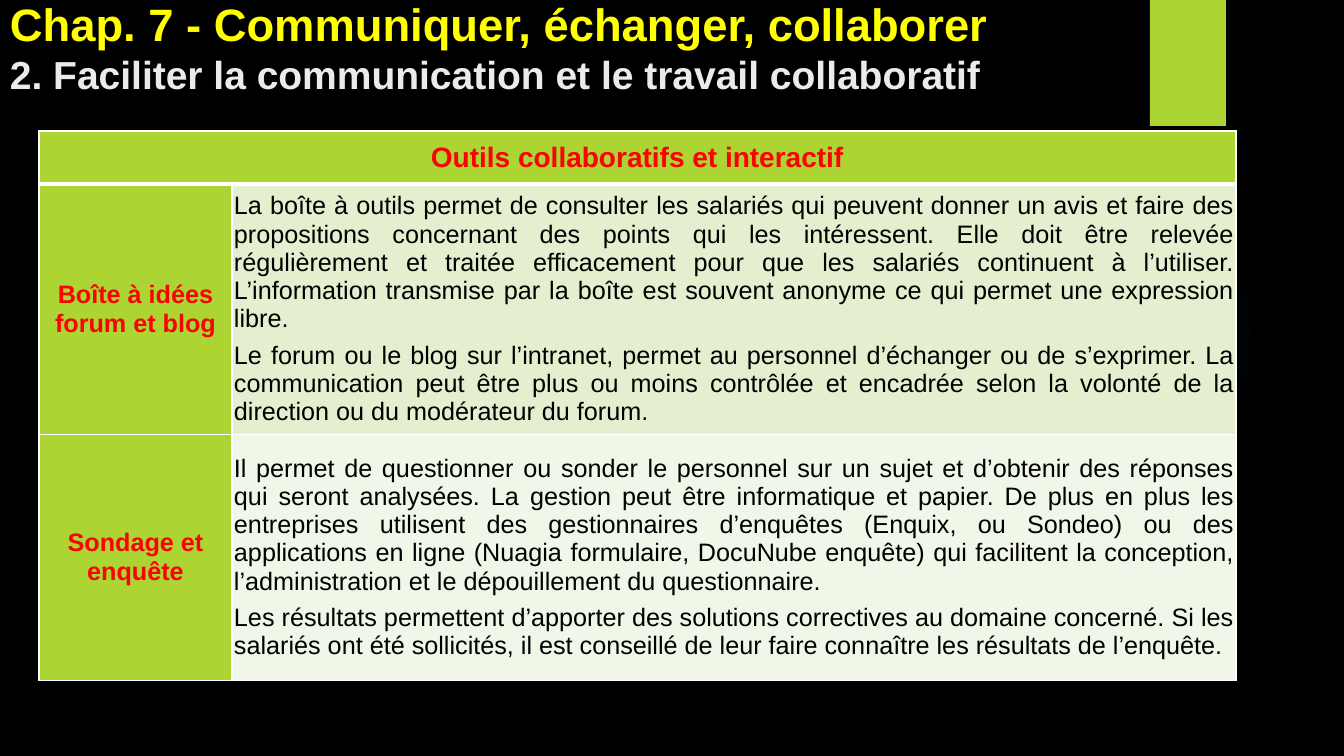
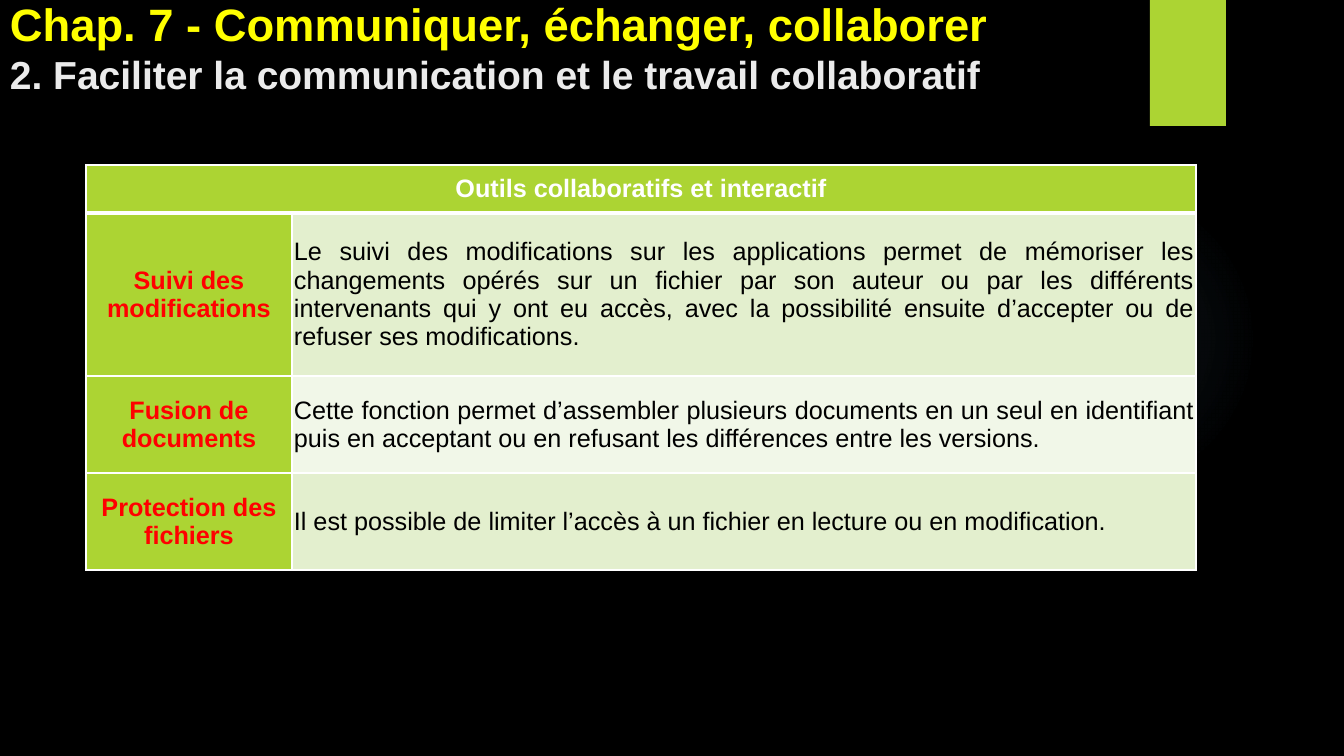
import pptx
import pptx.util
import pptx.dml.color
import pptx.enum.shapes
import pptx.enum.text
import pptx.oxml
import pptx.oxml.ns

RGB = pptx.dml.color.RGBColor
ALIGN = pptx.enum.text.PP_ALIGN
ANCHOR = pptx.enum.text.MSO_ANCHOR
SHAPE = pptx.enum.shapes.MSO_SHAPE

BLACK = RGB(0x00, 0x00, 0x00)
WHITE = RGB(0xFF, 0xFF, 0xFF)
YELLOW = RGB(0xFF, 0xFF, 0x00)
RED = RGB(0xFF, 0x00, 0x00)
PALE_GREY = RGB(0xEB, 0xEB, 0xEB)
LIME = RGB(0xAC, 0xD4, 0x33)
GLOW_BLUE = RGB(0x7A, 0xC4, 0xF0)
ROW_TINTS = [RGB(0xE3, 0xEF, 0xCE), RGB(0xF1, 0xF7, 0xE8)]
FONT = "Arial"
NAMESPACE = pptx.oxml.ns.nsdecls("a")

# Content: lengths in px
TITLE_LINES = [
    ("Chap. 7 - Communiquer, échanger, collaborer", 32.4, YELLOW),
    ("2. Faciliter la communication et le travail collaboratif", 27.9, PALE_GREY),
]
TABLE_HEADING = "Outils collaboratifs et interactif"
SLIDES = [
    {
        "left": 39, "top": 131, "columns": [193, 1004], "heights": [53, 246, 246],
        "heading_size": 20, "heading_color": RED,
        "rows": [
            ("Boîte à idées forum et blog", [
                "La boîte à outils permet de consulter les salariés qui peuvent donner un avis "
                "et faire des propositions concernant des points qui les intéressent. Elle doit "
                "être relevée régulièrement et traitée efficacement pour que les salariés "
                "continuent à l’utiliser. L’information transmise par la boîte est souvent "
                "anonyme ce qui permet une expression libre.",
                "Le forum ou le blog sur l’intranet, permet au personnel d’échanger ou de "
                "s’exprimer. La communication peut être plus ou moins contrôlée et encadrée "
                "selon la volonté de la direction ou du modérateur du forum.",
            ]),
            ("Sondage et enquête", [
                "Il permet de questionner ou sonder le personnel sur un sujet et d’obtenir des "
                "réponses qui seront analysées. La gestion peut être informatique et papier. De "
                "plus en plus les entreprises utilisent des gestionnaires d’enquêtes (Enquix, "
                "ou Sondeo) ou des applications en ligne (Nuagia formulaire, DocuNube enquête) "
                "qui facilitent la conception, l’administration et le dépouillement du "
                "questionnaire.",
                "Les résultats permettent d’apporter des solutions correctives au domaine "
                "concerné. Si les salariés ont été sollicités, il est conseillé de leur faire "
                "connaître les résultats de l’enquête.",
            ]),
        ],
    },
    {
        "left": 86, "top": 165, "columns": [206, 904], "heights": [48, 163, 97, 97],
        "heading_size": 18, "heading_color": WHITE,
        "rows": [
            ("Suivi des modifications", [
                "Le suivi des modifications sur les applications permet de mémoriser les "
                "changements opérés sur un fichier par son auteur ou par les différents "
                "intervenants qui y ont eu accès, avec la possibilité ensuite d’accepter ou de "
                "refuser ses modifications.",
            ]),
            ("Fusion de documents", [
                "Cette fonction permet d’assembler plusieurs documents en un seul en "
                "identifiant puis en acceptant ou en refusant les différences entre les "
                "versions.",
            ]),
            ("Protection des fichiers", [
                "Il est possible de limiter l’accès à un fichier en lecture ou en modification.",
            ]),
        ],
    },
]


def px(length):
    return pptx.util.Emu(round(length * 914400 / 100.8))


def add_text(para, text, size=18, color=BLACK, bold=False, align=None):
    """Add one run of formatted text to a paragraph."""
    if align is not None:
        para.alignment = align
    span = para.add_run()
    span.text = text
    span.font.name = FONT
    span.font.size = pptx.util.Pt(size)
    span.font.bold = bold
    span.font.color.rgb = color


def add_plain_shape(page, kind, left, top, width, height):
    shape = page.shapes.add_shape(kind, px(left), px(top), px(width), px(height))
    shape.shadow.inherit = False
    shape.line.fill.background()
    shape.fill.solid()
    return shape


def add_glow(page):
    glow = add_plain_shape(page, SHAPE.OVAL, 949, 184, 310, 310)
    stops = "".join(
        f'<a:gs pos="{place * 1000}"><a:srgbClr val="{GLOW_BLUE}">'
        f'<a:alpha val="{alpha * 1000}"/></a:srgbClr></a:gs>'
        for place, alpha in [(0, 7), (36, 6), (69, 0)])
    gradient = pptx.oxml.parse_xml(
        f'<a:gradFill {NAMESPACE} rotWithShape="1"><a:gsLst>{stops}</a:gsLst>'
        '<a:path path="circle"><a:fillToRect l="50000" t="50000" r="50000" b="50000"/>'
        '</a:path></a:gradFill>')
    properties = glow.element.spPr
    properties.replace(properties.find(pptx.oxml.ns.qn("a:solidFill")), gradient)


def add_band(page):
    band = add_plain_shape(page, SHAPE.RECTANGLE, 1150, 0, 76, 126)
    band.fill.fore_color.rgb = LIME
    effects = band.element.spPr.find(pptx.oxml.ns.qn("a:effectLst"))
    effects.append(pptx.oxml.parse_xml(
        f'<a:outerShdw {NAMESPACE} blurRad="38100" dist="25400" dir="5400000">'
        '<a:srgbClr val="000000"><a:alpha val="45000"/></a:srgbClr></a:outerShdw>'))


def add_title(page):
    box = page.shapes.add_textbox(0, 0, px(1134), px(102))
    frame = box.text_frame
    frame.word_wrap = True
    frame.vertical_anchor = ANCHOR.BOTTOM
    para = frame.paragraphs[0]
    for index, (text, size, color) in enumerate(TITLE_LINES):
        if index:
            para.add_line_break()
        add_text(para, text, size=size, color=color, bold=True)


def format_cell(cell, fill, top=1, bottom=1):
    """Set fill, insets and white borders; top and bottom are widths in points."""
    cell.fill.solid()
    cell.fill.fore_color.rgb = fill
    cell.vertical_anchor = ANCHOR.MIDDLE
    cell.margin_left = cell.margin_right = px(2)
    cell.margin_top = cell.margin_bottom = 0
    properties = cell._tc.get_or_add_tcPr()
    widths = [("L", 1), ("R", 1), ("T", top), ("B", bottom)]
    for index, (side, width) in enumerate(widths):
        properties.insert(index, pptx.oxml.parse_xml(
            f'<a:ln{side} {NAMESPACE} w="{width * 12700}"><a:solidFill>'
            f'<a:srgbClr val="{WHITE}"/></a:solidFill></a:ln{side}>'))


def add_tools_table(page, content):
    columns, heights = content["columns"], content["heights"]
    table = page.shapes.add_table(
        len(heights), len(columns), px(content["left"]), px(content["top"]),
        px(sum(columns)), px(sum(heights))).table
    table.horz_banding = False
    for column, width in zip(table.columns, columns):
        column.width = px(width)
    for row, height in zip(table.rows, heights):
        row.height = px(height)

    # Heading across both columns
    heading = table.cell(0, 0)
    heading.merge(table.cell(0, 1))
    for cell in table.rows[0].cells:
        format_cell(cell, LIME, bottom=3)
    add_text(heading.text_frame.paragraphs[0], TABLE_HEADING, bold=True, align=ALIGN.CENTER,
             size=content["heading_size"], color=content["heading_color"])

    # Label and description rows
    for index, (label, descriptions) in enumerate(content["rows"]):
        name_cell, text_cell = table.rows[index + 1].cells
        top = 1 if index else 3
        format_cell(name_cell, LIME, top=top)
        format_cell(text_cell, ROW_TINTS[index % 2], top=top)
        add_text(name_cell.text_frame.paragraphs[0], label, color=RED, bold=True,
                 align=ALIGN.CENTER)
        frame = text_cell.text_frame
        for position, description in enumerate(descriptions):
            para = frame.add_paragraph() if position else frame.paragraphs[0]
            if position:
                para.space_before = pptx.util.Pt(3)
            para.space_after = pptx.util.Pt(3)
            add_text(para, description, align=ALIGN.JUSTIFY)


def main():
    deck = pptx.Presentation()
    deck.slide_width, deck.slide_height = px(1344), px(756)
    for content in SLIDES:
        page = deck.slides.add_slide(deck.slide_layouts[6])
        page.background.fill.solid()
        page.background.fill.fore_color.rgb = BLACK
        add_glow(page)
        add_band(page)
        add_title(page)
        add_tools_table(page, content)
    deck.save("out.pptx")


if __name__ == "__main__":
    main()
